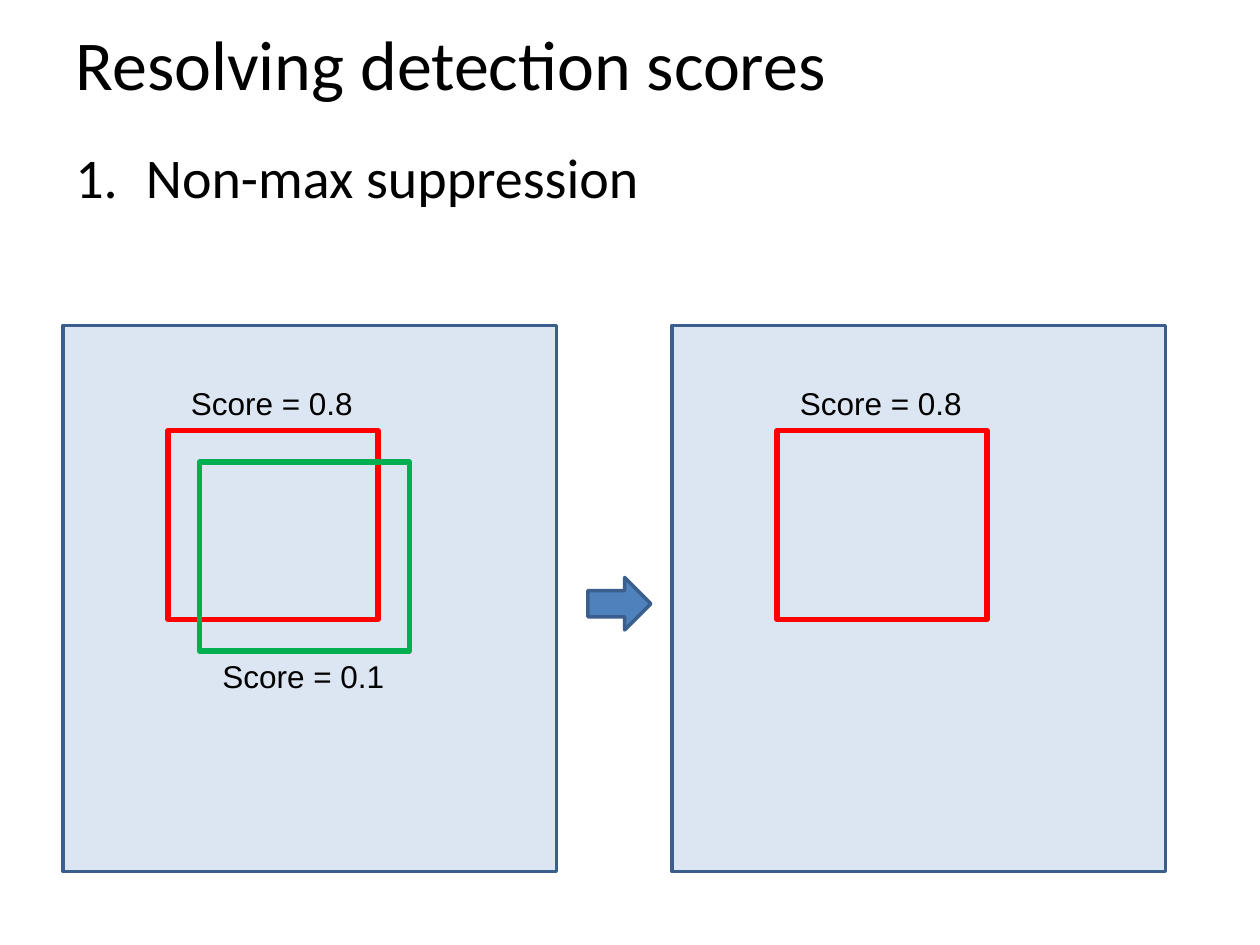
import dataclasses

import pptx
import pptx.dml.color
import pptx.enum.shapes
import pptx.enum.text
import pptx.oxml.ns
import pptx.util
from lxml import etree

SHAPE = pptx.enum.shapes.MSO_SHAPE
ALIGN = pptx.enum.text.PP_ALIGN
ANCHOR = pptx.enum.text.MSO_ANCHOR


@dataclasses.dataclass(frozen=True)
class Theme:
    """Colours, fonts and sizes used on the slide."""
    text: str = "000000"
    panel: str = "DCE6F2"
    arrow: str = "4F81BD"
    outline: str = "3A5F8C"
    kept: str = "FF0000"
    suppressed: str = "00B050"
    heading_font: str = "Calibri"
    label_font: str = "Arial"
    title_size: int = 40
    body_size: int = 32
    label_size: int = 18
    outline_width: int = 2
    detection_width: int = 3


THEME = Theme()


def grid(n):
    """Return the length of n grid units, twelve to the inch."""
    return pptx.util.Inches(n / 12)


def rgb(value):
    """Return a colour from its hex value."""
    return pptx.dml.color.RGBColor.from_string(value)


def write(sp, text, font, size, anchor=ANCHOR.TOP, wrap=True):
    """Put one left-aligned paragraph in a shape and return it."""
    tf = sp.text_frame
    tf.text = text
    tf.word_wrap = wrap
    tf.vertical_anchor = anchor
    p = tf.paragraphs[0]
    p.alignment = ALIGN.LEFT
    r = p.runs[0]
    r.font.name = font
    r.font.size = pptx.util.Pt(size)
    r.font.color.rgb = rgb(THEME.text)
    return p


def add_outlined(s, kind, box, line, width, fill=None):
    """Add a preset shape in a grid box with an outline and optional fill."""
    sp = s.shapes.add_shape(kind, *map(grid, box))
    sp.shadow.inherit = False
    sp.line.color.rgb = rgb(line)
    sp.line.width = pptx.util.Pt(width)
    if fill:
        sp.fill.solid()
        sp.fill.fore_color.rgb = rgb(fill)
    else:
        sp.fill.background()


def add_title(s, box, text):
    """Place and format the title placeholder."""
    sp = s.shapes.title
    sp.left, sp.top, sp.width, sp.height = map(grid, box)
    write(sp, text, THEME.heading_font, THEME.title_size, ANCHOR.MIDDLE)


def add_numbered_item(s, box, text):
    """Add a numbered line with a hanging indent."""
    sp = s.shapes.add_textbox(*map(grid, box))
    p = write(sp, text, THEME.heading_font, THEME.body_size)
    pPr = p._p.get_or_add_pPr()
    indent = pptx.util.Inches(0.56)
    pPr.set("marL", str(indent))
    pPr.set("indent", str(-indent))
    qn = pptx.oxml.ns.qn
    before = etree.SubElement(pPr, qn("a:spcBef"))
    etree.SubElement(before, qn("a:spcPct"), val="20000")
    etree.SubElement(pPr, qn("a:buFont"), typeface="+mj-lt")
    etree.SubElement(pPr, qn("a:buAutoNum"), type="arabicPeriod")


def add_label(s, left, top, text):
    """Add a score label at a grid position."""
    sp = s.shapes.add_textbox(*map(grid, (left, top, 18, 4.8)))
    write(sp, text, THEME.label_font, THEME.label_size, wrap=False)
    sp.text_frame.auto_size = pptx.enum.text.MSO_AUTO_SIZE.SHAPE_TO_FIT_TEXT


def add_panel(s, box, detections):
    """Draw an image panel with its (offset, colour, score, label row) detections."""
    left, top = box[:2]
    add_outlined(s, SHAPE.RECTANGLE, box, THEME.outline, THEME.outline_width, THEME.panel)
    for offset, color, _, _ in detections:
        add_outlined(s, SHAPE.RECTANGLE, (left + offset, top + offset, 20, 18),
                     color, THEME.detection_width)
    for offset, _, score, row in detections:
        add_label(s, left + offset + 1, top + offset + row, f"Score = {score}")


def main():
    """Build and save the slide."""
    prs = pptx.Presentation()
    prs.slide_width, prs.slide_height = grid(120), grid(90)
    s = prs.slides.add_slide(prs.slide_layouts[5])
    add_title(s, (6, 0, 108, 12), "Resolving detection scores")
    add_numbered_item(s, (6, 13, 108, 12), "Non-max suppression")
    kept = (10, THEME.kept, 0.8, -5)
    suppressed = (13, THEME.suppressed, 0.1, 18)
    add_panel(s, (6, 31, 47, 52), [kept, suppressed])
    add_panel(s, (64, 31, 47, 52), [kept])
    add_outlined(s, SHAPE.RIGHT_ARROW, (56, 55, 6, 5), THEME.outline,
                 THEME.outline_width, THEME.arrow)
    prs.save("out.pptx")


if __name__ == "__main__":
    main()
